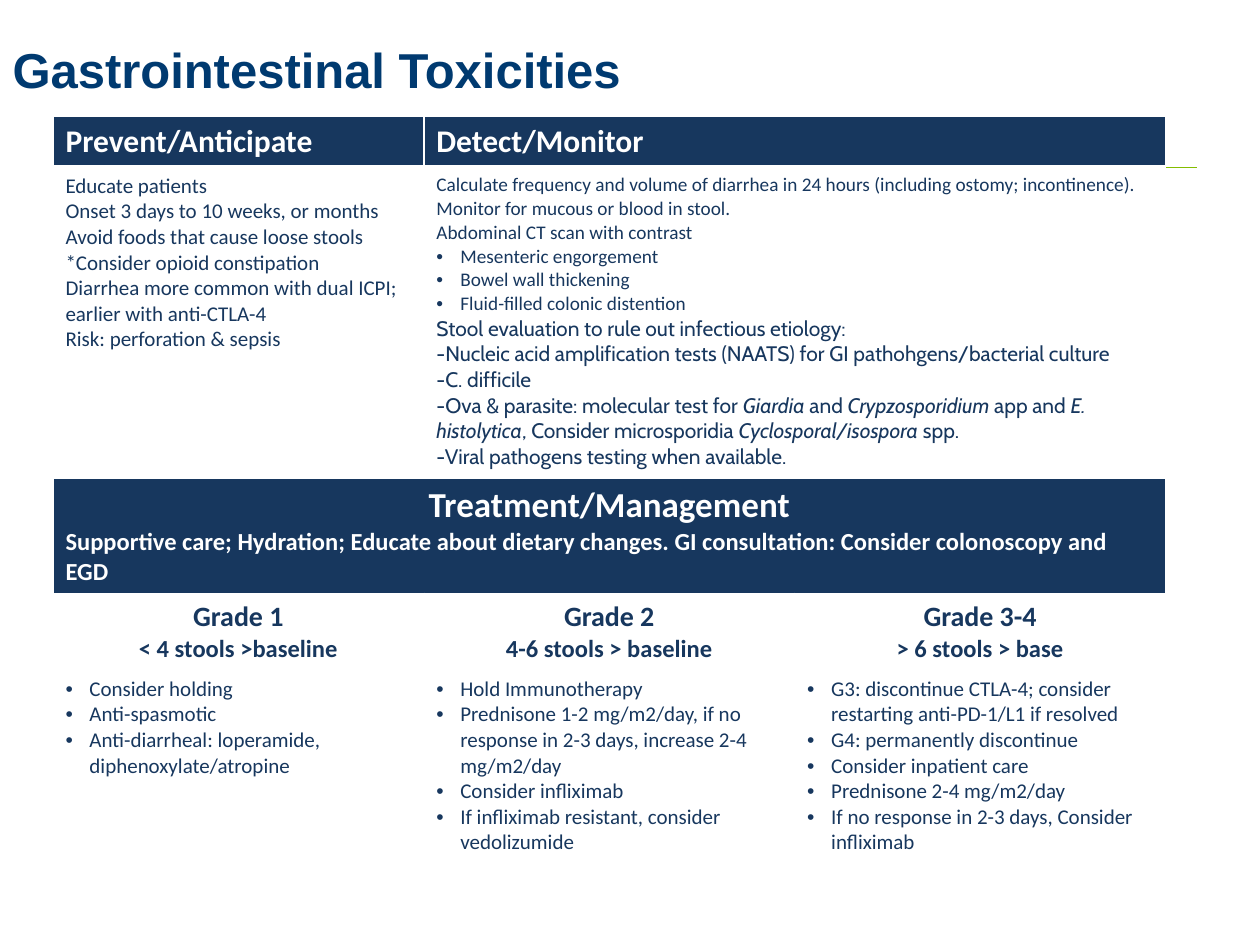
"""Build the gastrointestinal toxicities slide."""
from dataclasses import dataclass

import lxml.etree
import pptx
import pptx.dml.color
import pptx.enum.shapes
import pptx.enum.text
import pptx.oxml.ns
import pptx.table
import pptx.util
from pptx.util import Inches

COLORS = {"title": "003A70", "navy": "17375E", "white": "FFFFFF", "green": "84BD00"}
ALIGN = pptx.enum.text.PP_ALIGN
qn = pptx.oxml.ns.qn


@dataclass
class Line:
    """One paragraph; parts between underscores are italic."""
    text: str
    size: float = 12
    font: str = "Calibri"
    bold: bool = False
    bullet: bool = False
    centered: bool = False


@dataclass
class Entry:
    """One table cell, possibly spanning several columns."""
    row: int
    column: int
    lines: list[Line]
    span: int = 1
    dark: bool = False
    bottom: float = 1


def rgb(name: str) -> pptx.dml.color.RGBColor:
    """Return a named colour."""
    return pptx.dml.color.RGBColor.from_string(COLORS[name])


def bullets(*texts: str, size: float = 12) -> list[Line]:
    """Return bulleted lines."""
    return [Line(text, size, bullet=True) for text in texts]


def grade(name: str, stools: str) -> list[Line]:
    """Return the two centred lines of a grade heading."""
    return [Line(name, 16, bold=True, centered=True),
            Line(stools, 14, bold=True, centered=True)]


def write_line(para, line: Line, color: str) -> None:
    """Write and format one paragraph."""
    if line.centered:
        para.alignment = ALIGN.CENTER
    if line.bullet:
        properties = para._p.get_or_add_pPr()
        properties.set("marL", str(Inches(0.19)))
        properties.set("indent", str(Inches(-0.19)))
        lxml.etree.SubElement(properties, qn("a:buFont"), typeface="Arial")
        lxml.etree.SubElement(properties, qn("a:buChar"), char="•")
    for index, text in enumerate(line.text.split("_")):
        span = para.add_run()
        span.text = text
        span.font.name = line.font
        span.font.size = pptx.util.Pt(line.size)
        span.font.bold = line.bold
        span.font.italic = index % 2 == 1
        span.font.color.rgb = rgb(color)


def add_borders(cell, bottom: float) -> None:
    """Give a cell white borders."""
    properties = cell._tc.get_or_add_tcPr()
    for side, width in {"L": 1, "R": 1, "T": 1, "B": bottom}.items():
        border = lxml.etree.SubElement(
            properties, qn(f"a:ln{side}"), w=str(pptx.util.Pt(width)))
        fill = lxml.etree.SubElement(border, qn("a:solidFill"))
        lxml.etree.SubElement(fill, qn("a:srgbClr"), val=COLORS["white"])


def fill_entry(table: pptx.table.Table, entry: Entry) -> None:
    """Merge, fill and write one table cell."""
    cell = table.cell(entry.row, entry.column)
    last = entry.column + entry.span - 1
    if entry.span > 1:
        cell.merge(table.cell(entry.row, last))
    for column in range(entry.column, last + 1):
        part = table.cell(entry.row, column)
        add_borders(part, entry.bottom)
        part.fill.solid()
        part.fill.fore_color.rgb = rgb("navy" if entry.dark else "white")
    frame = cell.text_frame
    for index, line in enumerate(entry.lines):
        para = frame.add_paragraph() if index else frame.paragraphs[0]
        write_line(para, line, "white" if entry.dark else "navy")


PREVENT = [Line(text) for text in (
    "Educate patients",
    "Onset 3 days to 10 weeks, or months",
    "Avoid foods that cause loose stools",
    "*Consider opioid constipation",
    "Diarrhea more common with dual ICPI; earlier with anti-CTLA-4",
    "Risk: perforation & sepsis")]
MONITOR = [Line(text, 11) for text in (
    "Calculate frequency and volume of diarrhea in 24 hours (including ostomy; incontinence).",
    "Monitor for mucous or blood in stool.",
    "Abdominal CT scan with contrast")]
FINDINGS = bullets("Mesenteric engorgement", "Bowel wall thickening",
                   "Fluid-filled colonic distention", size=11)
STOOL_TESTS = [Line(text, font="Cabin") for text in (
    "Stool evaluation to rule out infectious etiology:",
    "-Nucleic acid amplification tests (NAATS) for GI pathohgens/bacterial culture",
    "-C. difficile",
    "-Ova & parasite: molecular test for _Giardia_ and _Crypzosporidium_ app and "
    "_E. histolytica_, Consider microsporidia _Cyclosporal/isospora _spp.",
    "-Viral pathogens testing when available.")]
TREATMENT = [
    Line("Treatment/Management", 20, bold=True, centered=True),
    Line("Supportive care; Hydration; Educate about dietary changes. "
         "GI consultation: Consider colonoscopy and EGD", 14, bold=True)]
ENTRIES = [
    Entry(0, 0, [Line("Prevent/Anticipate", 18, bold=True)], dark=True, bottom=3),
    Entry(0, 1, [Line("Detect/Monitor", 18, bold=True)], 2, True, 3),
    Entry(1, 0, PREVENT),
    Entry(1, 1, MONITOR + FINDINGS + STOOL_TESTS, 2),
    Entry(2, 0, TREATMENT, 3, True),
    Entry(3, 0, grade("Grade 1", "< 4 stools >baseline")),
    Entry(3, 1, grade("Grade 2", "4-6 stools > baseline")),
    Entry(3, 2, grade("Grade 3-4", "> 6 stools > base")),
    Entry(4, 0, bullets("Consider holding", "Anti-spasmotic",
                        "Anti-diarrheal: loperamide, diphenoxylate/atropine")),
    Entry(4, 1, bullets(
        "Hold Immunotherapy",
        "Prednisone 1-2 mg/m2/day, if no response in 2-3 days, increase 2-4 mg/m2/day",
        "Consider infliximab", "If infliximab resistant, consider vedolizumide")),
    Entry(4, 2, bullets(
        "G3: discontinue CTLA-4; consider restarting anti-PD-1/L1 if resolved",
        "G4: permanently discontinue", "Consider inpatient care",
        "Prednisone 2-4 mg/m2/day",
        "If no response in 2-3 days, Consider infliximab")),
]
ROW_HEIGHTS = (0.38, 2.47, 0.86, 0.57, 1.63)


def add_title(page) -> None:
    """Place and format the slide title."""
    box = page.shapes.title
    box.left, box.top, box.width, box.height = (
        Inches(0), Inches(0.17), Inches(8), Inches(0.75))
    frame = box.text_frame
    frame.word_wrap = True
    frame.vertical_anchor = pptx.enum.text.MSO_ANCHOR.MIDDLE
    para = frame.paragraphs[0]
    para.alignment = ALIGN.LEFT
    write_line(para, Line("Gastrointestinal Toxicities", 28, "Arial", True), "title")


def add_rule(page) -> None:
    """Draw the thin green rule behind the table."""
    rule = page.shapes.add_connector(
        pptx.enum.shapes.MSO_CONNECTOR.STRAIGHT,
        Inches(0.5), Inches(1.33), Inches(9.5), Inches(1.33))
    rule.line.color.rgb = rgb("green")
    rule.line.width = pptx.util.Pt(0.75)
    lxml.etree.SubElement(rule._element.spPr, qn("a:effectLst"))


def add_toxicity_table(page) -> None:
    """Add the table of prevention, monitoring and treatment."""
    table = page.shapes.add_table(
        len(ROW_HEIGHTS), 3, Inches(0.42), Inches(0.92),
        Inches(8.83), Inches(sum(ROW_HEIGHTS))).table
    for row, height in zip(table.rows, ROW_HEIGHTS):
        row.height = Inches(height)
    for entry in ENTRIES:
        fill_entry(table, entry)


def main() -> None:
    """Build and save the deck."""
    deck = pptx.Presentation()
    deck.slide_width, deck.slide_height = Inches(10), Inches(7.5)
    page = deck.slides.add_slide(deck.slide_layouts[5])
    add_rule(page)
    add_title(page)
    add_toxicity_table(page)
    deck.save("out.pptx")


if __name__ == "__main__":
    main()
